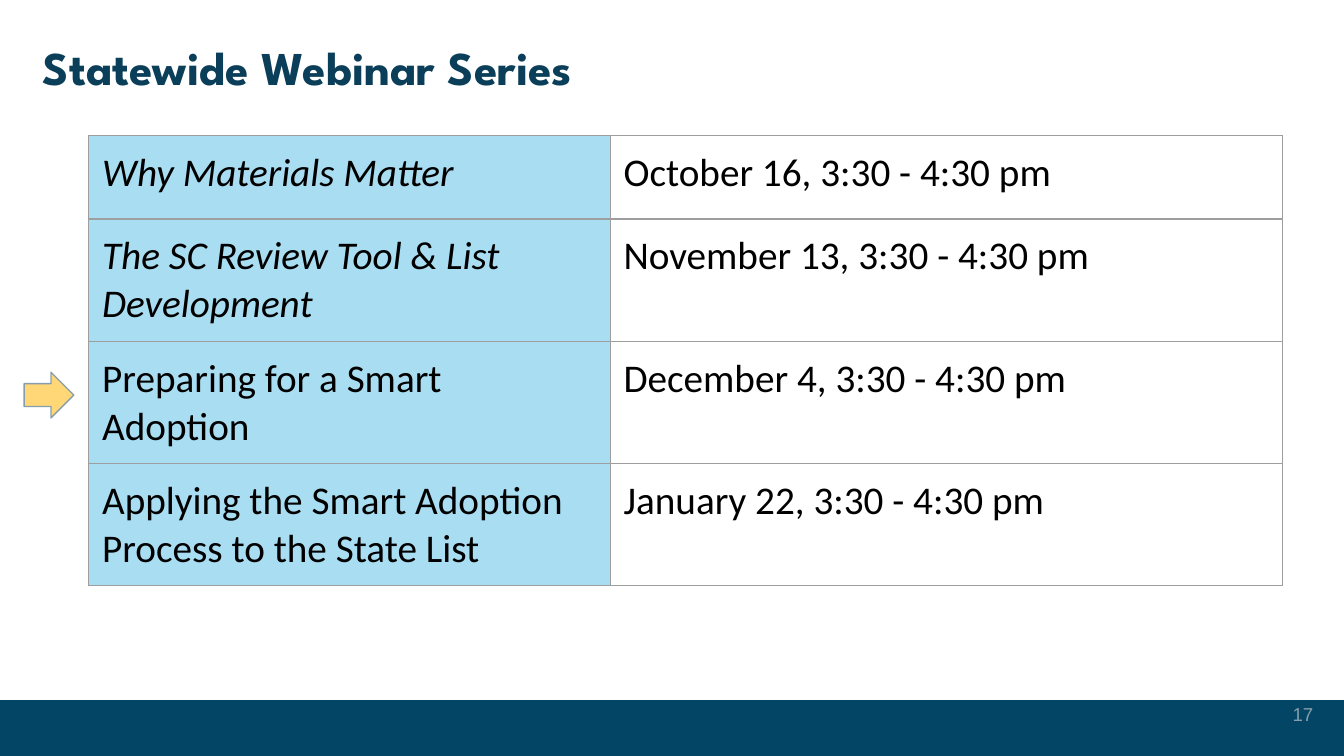
import pptx
import pptx.util
import pptx.dml.color
import pptx.enum.shapes
import pptx.enum.text
import pptx.oxml
import pptx.oxml.ns

Inches, Pt = pptx.util.Inches, pptx.util.Pt
RGB = pptx.dml.color.RGBColor
SHAPE = pptx.enum.shapes.MSO_SHAPE
ALIGN = pptx.enum.text.PP_ALIGN
ANCHOR = pptx.enum.text.MSO_ANCHOR

# Content: topic, date, italic topic
TITLE = "Statewide Webinar Series"
PAGE = "17"
ROWS = [
    ("Why Materials Matter", "October 16, 3:30 - 4:30 pm", True),
    ("The SC Review Tool & List Development", "November 13, 3:30 - 4:30 pm", True),
    ("Preparing for a Smart Adoption", "December 4, 3:30 - 4:30 pm", False),
    ("Applying the Smart Adoption Process to the State List",
     "January 22, 3:30 - 4:30 pm", False),
]
WIDTHS = [3.88, 5]
HEIGHTS = [0.62, 0.91, 0.91, 0.91]

NAVY = RGB(0x03, 0x45, 0x65)
INK = RGB(0x0A, 0x3E, 0x59)
SLATE = RGB(0x86, 0x9E, 0xAB)
SKY = RGB(0xA9, 0xDD, 0xF2)
GOLD = RGB(0xFF, 0xD7, 0x77)
GREY = RGB(0x9E, 0x9E, 0x9E)
BLACK = RGB(0, 0, 0)

HEAD = {"name": "League Spartan", "size": Pt(25.2), "bold": True}
NUM = {"name": "Arial", "size": Pt(10)}
BODY = {"name": "Calibri", "size": Pt(21)}
PADS = ("margin_left", "margin_right", "margin_top", "margin_bottom")


def style(para, text, font, color):
    para.text = text
    for key, val in font.items():
        setattr(para.runs[0].font, key, val)
    para.runs[0].font.color.rgb = color


def pad(item):
    for side in PADS:
        setattr(item, side, Inches(0.1))


def add_text(slide, box, text, font, color):
    frame = slide.shapes.add_textbox(*map(Inches, box)).text_frame
    frame.word_wrap = True
    pad(frame)
    style(frame.paragraphs[0], text, font, color)
    return frame


def add_shape(slide, kind, box, color):
    shape = slide.shapes.add_shape(kind, *map(Inches, box))
    shape.shadow.inherit = False
    shape.fill.solid()
    shape.fill.fore_color.rgb = color
    shape.line.fill.background()
    return shape


def add_edges(cell):
    props = cell._tc.get_or_add_tcPr()
    space = pptx.oxml.ns.nsdecls("a")
    for i, side in enumerate("LRTB"):
        edge = pptx.oxml.parse_xml(
            f'<a:ln{side} {space} w="{Pt(0.75)}"><a:solidFill>'
            f'<a:srgbClr val="{GREY}"/></a:solidFill></a:ln{side}>')
        props.insert(i, edge)


# Widescreen page, 16 by 9
deck = pptx.Presentation()
deck.slide_width, deck.slide_height = Inches(10), Inches(10 * 9 / 16)
slide = deck.slides.add_slide(deck.slide_layouts[6])

# Footer band and page number
add_shape(slide, SHAPE.RECTANGLE, (0, 5.21, 10, 0.44), NAVY)
foot = add_text(slide, (9.27, 5.1, 0.6, 0.43), PAGE, NUM, SLATE)
foot.vertical_anchor = ANCHOR.MIDDLE
foot.paragraphs[0].alignment = ALIGN.RIGHT

# Title
add_text(slide, (0.22, 0.19, 9.32, 0.63), TITLE, HEAD, INK)

# Schedule table
box = (0.66, 1.01, sum(WIDTHS), sum(HEIGHTS))
table = slide.shapes.add_table(
    len(ROWS), len(WIDTHS), *map(Inches, box)).table
table.first_row = table.horz_banding = False
for col, width in zip(table.columns, WIDTHS):
    col.width = Inches(width)
for r, (topic, date, slant) in enumerate(ROWS):
    table.rows[r].height = Inches(HEIGHTS[r])
    for c, text in enumerate((topic, date)):
        cell = table.cell(r, c)
        pad(cell)
        font = {**BODY, "italic": slant and c == 0}
        style(cell.text_frame.paragraphs[0], text, font, BLACK)
        if c == 0:
            cell.fill.solid()
            cell.fill.fore_color.rgb = SKY
        else:
            cell.fill.background()
        add_edges(cell)

# Arrow at the current session
arrow = add_shape(slide, SHAPE.RIGHT_ARROW, (0.18, 2.77, 0.37, 0.34), GOLD)
arrow.line.color.rgb = SLATE
arrow.line.width = Pt(0.75)

deck.save("out.pptx")
